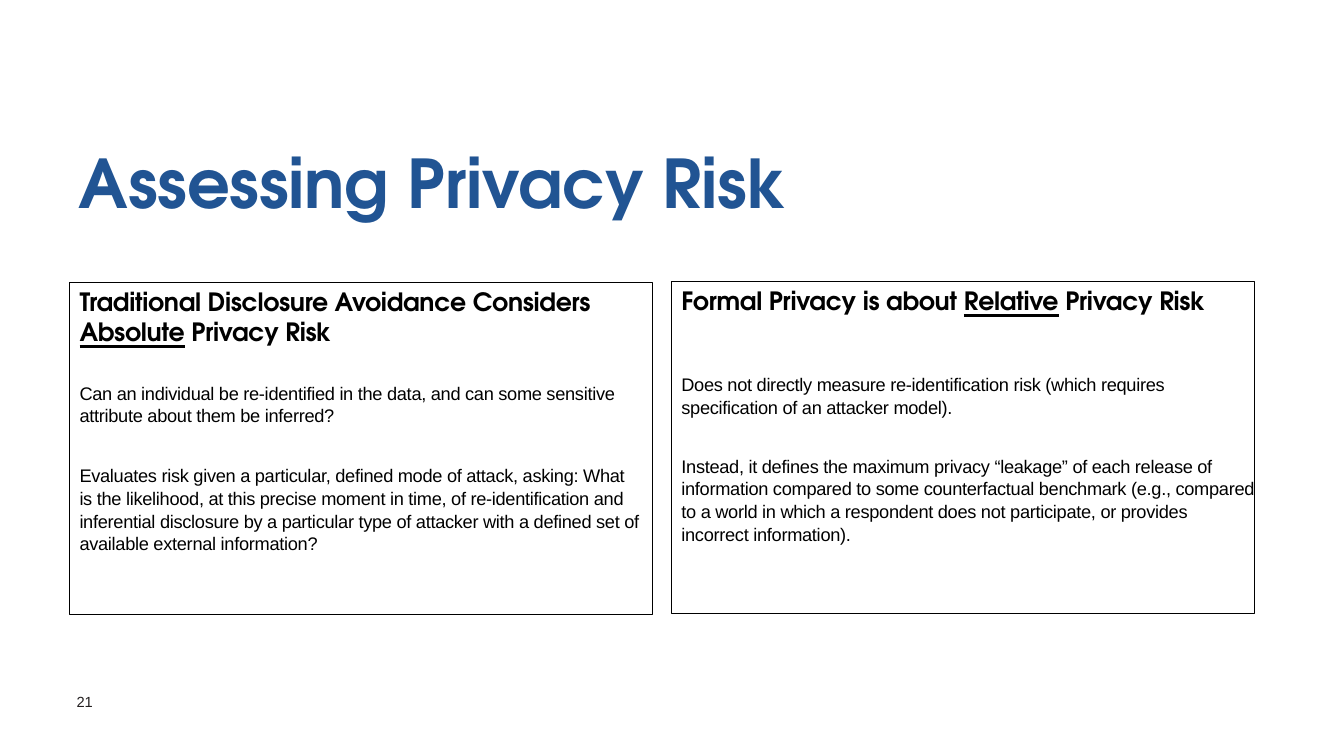
"""Build a slide that compares absolute and relative privacy risk."""
from pptx import Presentation
from pptx.dml.color import RGBColor
from pptx.enum.shapes import MSO_SHAPE
from pptx.enum.text import MSO_ANCHOR, PP_ALIGN
from pptx.util import Inches, Pt

HEAD_FONT = "TeX Gyre Adventor"


def color(value):
    return RGBColor.from_string(value)


def add_text(tf, text, size=13, font="Arial", fill="000000", bold=False,
             before=0, line=1.0, spacing=-20, underline=None, new=True):
    p = tf.add_paragraph() if new else tf.paragraphs[0]
    p.alignment = PP_ALIGN.LEFT
    p.space_before = Pt(before)
    p.line_spacing = line
    head, mark, tail = text.partition(underline) if underline else (text, "", "")
    for part in filter(None, (head, mark, tail)):
        for i, piece in enumerate(part.split("\v")):
            if i:
                p.add_line_break()
            r = p.add_run()
            r.text = piece
            r.font.size = Pt(size)
            r.font.name = font
            r.font.bold = bold
            r.font.underline = part == underline
            r.font.color.rgb = color(fill)
            r.font._element.set("spc", str(spacing))


prs = Presentation()
prs.slide_width, prs.slide_height = Inches(13.33), Inches(7.5)
slide = prs.slides.add_slide(prs.slide_layouts[6])

labels = [
    (0.77, 1.38, 7.1, 0.83, "Assessing Privacy Risk",
     dict(size=48, font=HEAD_FONT, fill="215493", bold=True, before=1, spacing=-10)),
    (0.75, 6.86, 0.19, 0.2, "21",
     dict(size=10.5, fill="231F20", before=1.1, spacing=0)),
]
for left, top, width, height, text, style in labels:
    sp = slide.shapes.add_textbox(Inches(left), Inches(top), Inches(width), Inches(height))
    tf = sp.text_frame
    tf.word_wrap = True
    tf.vertical_anchor = MSO_ANCHOR.MIDDLE
    tf.margin_left = tf.margin_top = Inches(0.01)
    tf.margin_right = tf.margin_bottom = 0
    add_text(tf, text, new=False, **style)

panels = [
    (0.69, 2.8, "Traditional Disclosure Avoidance Considers Absolute Privacy Risk", "Absolute",
     [("Can an individual be re-identified in the data, and can some sensitive "
       "attribute about them be inferred?", 24.5),
      ("Evaluates risk given a particular, defined mode of attack, asking: What \v"
       "is the likelihood, at this precise moment in time, of re-identification and "
       "inferential disclosure by a particular type of attacker with a defined set of "
       "available external information?", 26.5)]),
    (6.66, 2.79, "Formal Privacy is about Relative Privacy Risk", "Relative",
     [("Does not directly measure re-identification risk (which requires "
       "specification of an attacker model).", 40.5),
      ("Instead, it defines the maximum privacy “leakage” of each release of "
       "information compared to some counterfactual benchmark (e.g., "
       "compared to a world in which a respondent does not participate, or "
       "provides incorrect information).", 26)]),
]
for left, top, heading, key_word, body in panels:
    sp = slide.shapes.add_shape(MSO_SHAPE.RECTANGLE, Inches(left), Inches(top),
                                Inches(5.78), Inches(3.3))
    sp.shadow.inherit = False
    sp.fill.solid()
    sp.fill.fore_color.rgb = color("FFFFFF")
    sp.line.color.rgb = color("000000")
    sp.line.width = Pt(0.72)
    tf = sp.text_frame
    tf.word_wrap = True
    tf.vertical_anchor = MSO_ANCHOR.TOP
    tf.margin_left, tf.margin_top = Inches(0.1), Inches(0.04)
    tf.margin_right = tf.margin_bottom = 0
    add_text(tf, heading, size=18, font=HEAD_FONT, bold=True, before=3.1,
             underline=key_word, new=False)
    for text, gap in body:
        add_text(tf, text, before=gap, line=1.04)

prs.save("out.pptx")
